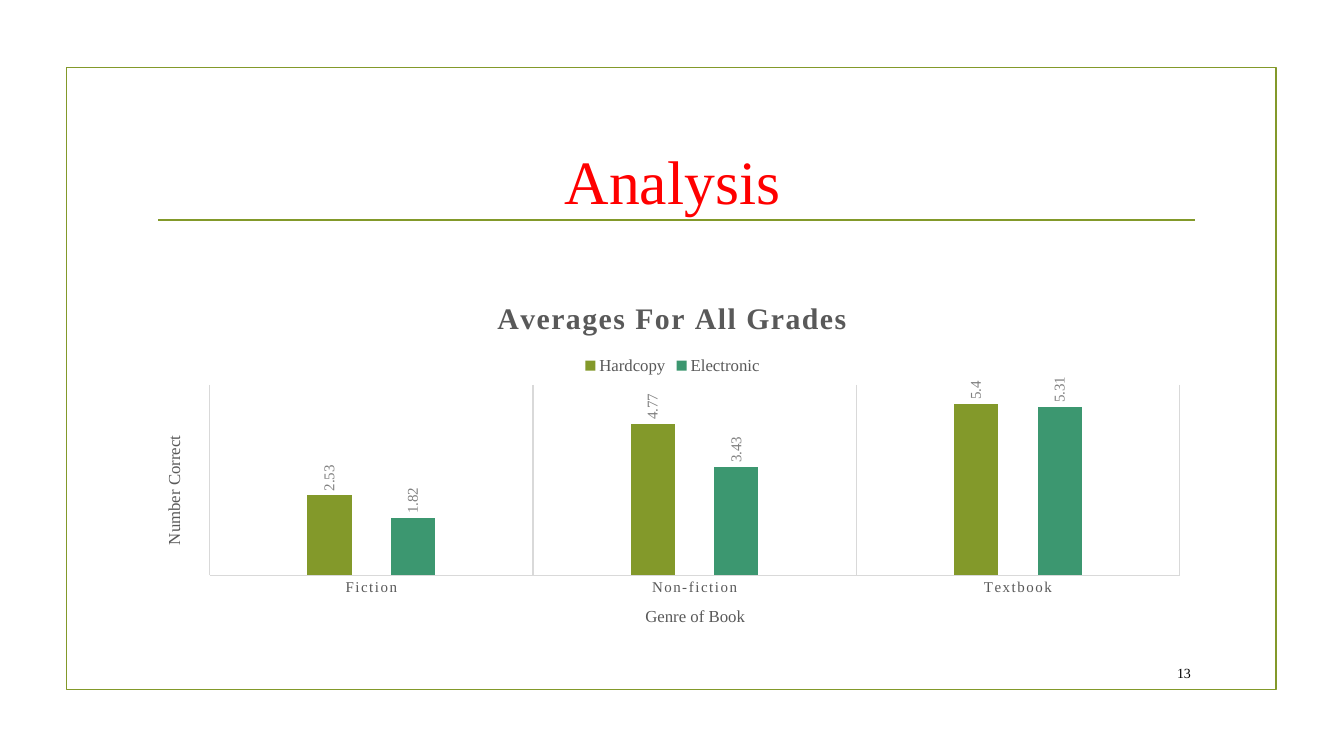
import functools
import pptx
import pptx.chart.data
import pptx.dml.color
import pptx.enum.chart
import pptx.enum.shapes
import pptx.enum.text
import pptx.oxml
import pptx.oxml.ns
import pptx.util
from pptx.util import Inches

COLORS = {
    "olive": "83992A", "teal": "3C9770", "red": "FF0000", "black": "000000",
    "text": "595959", "label": "808080", "grid": "D9D9D9",
}
FONT = "Times New Roman"
LABEL_SIZE = 10.64
CAPTION_SIZE = 11.97
TRACKING = 120


def rgb(name):
    return pptx.dml.color.RGBColor.from_string(COLORS[name])


def format_font(font, size, color, bold=False):
    font.name = FONT
    font.size = pptx.util.Pt(size)
    font.bold = bold
    font.color.rgb = rgb(color)


def format_line(line, color, width):
    line.color.rgb = rgb(color)
    line.width = pptx.util.Pt(width)


def write_text(tf, text, size=CAPTION_SIZE, color="text", bold=False, spacing=0, align="CENTER"):
    p = tf.paragraphs[0]
    p.alignment = getattr(pptx.enum.text.PP_ALIGN, align)
    r = p.add_run()
    r.text = text
    format_font(r.font, size, color, bold)
    if spacing:
        r._r.get_or_add_rPr().set("spc", str(spacing))


def rotate_up(element):
    body = element.xpath(".//a:bodyPr")[0]
    body.set("rot", "-5400000")
    body.set("vert", "horz")


def place_part(chart_size, element, inner=False, **lengths):
    for old in element.findall(pptx.oxml.ns.qn("c:layout")):
        element.remove(old)
    chart_w, chart_h = chart_size
    target = '<c:layoutTarget val="inner"/>' if inner else ""
    modes = "".join(f'<c:{k}Mode val="edge"/>' for k in ("x", "y"))
    values = "".join(f'<c:{k} val="{v / (chart_w if k in "xw" else chart_h)}"/>'
                     for k, v in lengths.items())
    layout = pptx.oxml.parse_xml(
        f'<c:layout {pptx.oxml.ns.nsdecls("c")}><c:manualLayout>'
        f"{target}{modes}{values}</c:manualLayout></c:layout>")
    overlay = element.find(pptx.oxml.ns.qn("c:overlay"))
    if overlay is None:
        element.insert(0, layout)
    else:
        overlay.addprevious(layout)


def add_frame(s, x, y, w, h):
    sp = s.shapes.add_shape(pptx.enum.shapes.MSO_SHAPE.RECTANGLE,
                            Inches(x), Inches(y), Inches(w), Inches(h))
    sp.shadow.inherit = False
    sp.fill.background()
    format_line(sp.line, "olive", 1.25)


def add_title(s, x, y, w, h):
    sp = s.shapes.title
    sp.left, sp.top, sp.width, sp.height = map(Inches, (x, y, w, h))
    sp.text_frame.vertical_anchor = pptx.enum.text.MSO_ANCHOR.MIDDLE
    write_text(sp.text_frame, "Analysis", size=44, color="red")
    rule_y = Inches(y + 1.11)
    rule = s.shapes.add_connector(pptx.enum.shapes.MSO_CONNECTOR.STRAIGHT,
                                  Inches(x + 0.15), rule_y, Inches(x + w - 0.07), rule_y)
    format_line(rule.line, "olive", 1.25)
    rule._element.spPr.append(
        pptx.oxml.parse_xml(f'<a:effectLst {pptx.oxml.ns.nsdecls("a")}/>'))


def format_axes(chart, place):
    cat, val = chart.category_axis, chart.value_axis
    cat.major_tick_mark = pptx.enum.chart.XL_TICK_MARK.NONE
    cat.has_major_gridlines = True
    for line in (cat.format.line, cat.major_gridlines.format.line):
        format_line(line, "grid", 0.75)
    format_font(cat.tick_labels.font, LABEL_SIZE, "text")
    cat._element.xpath("c:txPr//a:defRPr")[0].set("spc", str(TRACKING))
    val.minimum_scale, val.maximum_scale = 0, 6
    val.has_major_gridlines = False
    val.visible = False
    for axis, text, x, y in ((cat, "Genre of Book", 4.95, 3.18),
                             (val, "Number Correct", 0.17, 1.49)):
        write_text(axis.axis_title.text_frame, text)
        place(axis.axis_title._element, x=x, y=y)
    rotate_up(val.axis_title._element)


def add_averages_chart(s, x, y, w, h):
    data = pptx.chart.data.CategoryChartData()
    data.categories = ["Fiction", "Non-fiction", "Textbook"]
    data.add_series("Hardcopy", (2.53, 4.77, 5.4))
    data.add_series("Electronic", (1.82, 3.43, 5.31))
    chart = s.shapes.add_chart(pptx.enum.chart.XL_CHART_TYPE.COLUMN_CLUSTERED,
                               Inches(x), Inches(y), Inches(w), Inches(h), data).chart
    place = functools.partial(place_part, (w, h))
    format_font(chart.font, 10, "black")
    write_text(chart.chart_title.text_frame, "Averages For All Grades",
               size=21.28, bold=True, spacing=TRACKING)
    chart.chart_title.include_in_layout = False
    place(chart.chart_title._element, x=3.46, y=0.12)

    chart.has_legend = True
    chart.legend.position = pptx.enum.chart.XL_LEGEND_POSITION.TOP
    chart.legend.include_in_layout = False
    format_font(chart.legend.font, CAPTION_SIZE, "text")
    place(chart.legend._element, x=4.33, y=0.7)

    format_axes(chart, place)
    plot = chart.plots[0]
    plot.gap_width, plot.overlap, plot.vary_by_categories = 444, -90, False
    for series, color in zip(plot.series, ("olive", "teal")):
        series.format.fill.solid()
        series.format.fill.fore_color.rgb = rgb(color)
        labels = series.data_labels
        labels.show_value = True
        labels.position = pptx.enum.chart.XL_LABEL_POSITION.OUTSIDE_END
        format_font(labels.font, LABEL_SIZE, "label")
        rotate_up(labels._element)
    place(chart._chartSpace.chart.plotArea, inner=True, x=0.66, y=1.02, w=9.62, h=1.89)


def add_slide_number(s, x, y, w, h):
    tf = s.shapes.add_textbox(Inches(x), Inches(y), Inches(w), Inches(h)).text_frame
    tf.word_wrap = True
    tf.vertical_anchor = pptx.enum.text.MSO_ANCHOR.MIDDLE
    write_text(tf, "13", size=10, color="black", align="RIGHT")


def main():
    prs = pptx.Presentation()
    prs.slide_width, prs.slide_height = Inches(13.33), Inches(7.5)
    s = prs.slides.add_slide(prs.slide_layouts[5])
    add_frame(s, 0.66, 0.67, 12, 6.17)
    add_title(s, 1.42, 1.07, 10.5, 1.43)
    add_averages_chart(s, 1.42, 2.8, 10.5, 3.63)
    add_slide_number(s, 11.32, 6.52, 0.59, 0.31)
    prs.save("out.pptx")


if __name__ == "__main__":
    main()
